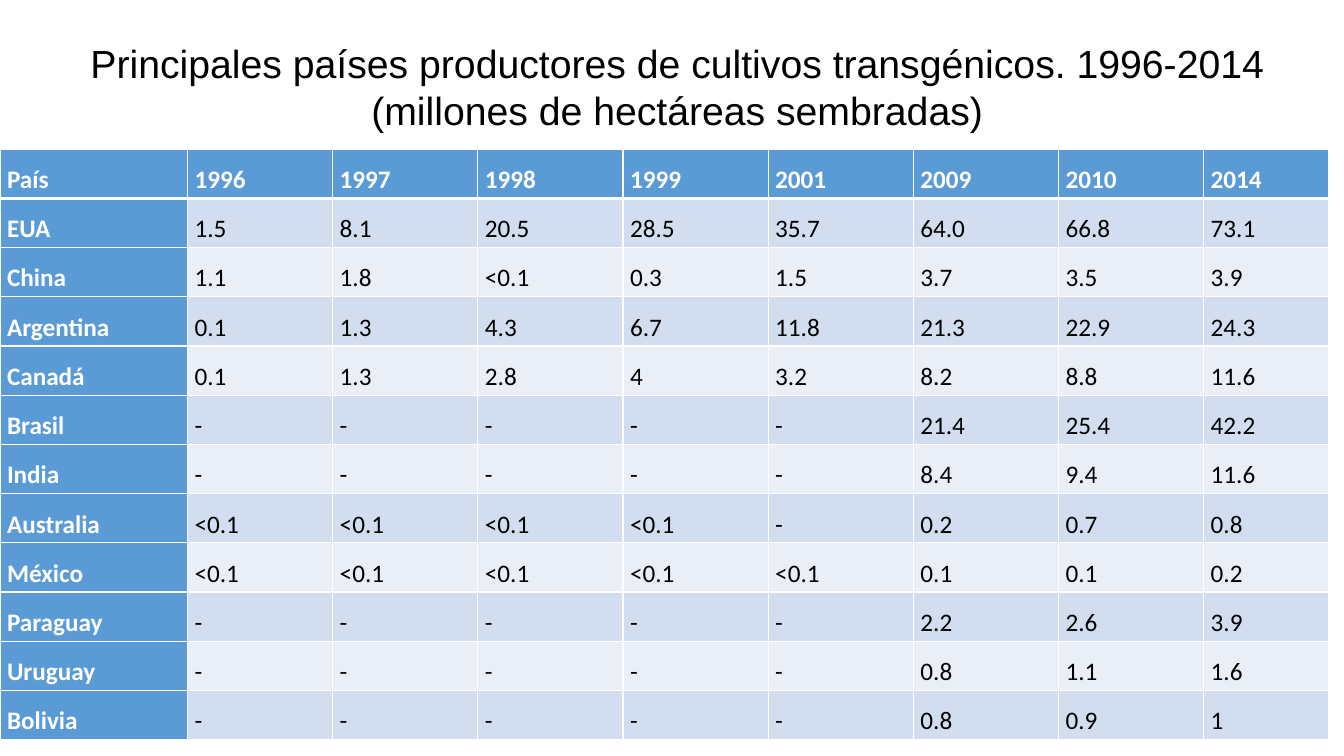
from lxml.etree import SubElement
from pptx import Presentation
from pptx.dml.color import RGBColor
from pptx.enum.text import MSO_ANCHOR, PP_ALIGN
from pptx.oxml.ns import qn
from pptx.util import Inches, Pt

TITLE = ("Principales países productores de cultivos transgénicos. 1996-2014 "
         "(millones de hectáreas sembradas)")
ROWS = [
    ("País", "1996", "1997", "1998", "1999", "2001", "2009", "2010", "2014"),
    ("EUA", "1.5", "8.1", "20.5", "28.5", "35.7", "64.0", "66.8", "73.1"),
    ("China", "1.1", "1.8", "<0.1", "0.3", "1.5", "3.7", "3.5", "3.9"),
    ("Argentina", "0.1", "1.3", "4.3", "6.7", "11.8", "21.3", "22.9", "24.3"),
    ("Canadá", "0.1", "1.3", "2.8", "4", "3.2", "8.2", "8.8", "11.6"),
    ("Brasil", "-", "-", "-", "-", "-", "21.4", "25.4", "42.2"),
    ("India", "-", "-", "-", "-", "-", "8.4", "9.4", "11.6"),
    ("Australia", "<0.1", "<0.1", "<0.1", "<0.1", "-", "0.2", "0.7", "0.8"),
    ("México", "<0.1", "<0.1", "<0.1", "<0.1", "<0.1", "0.1", "0.1", "0.2"),
    ("Paraguay", "-", "-", "-", "-", "-", "2.2", "2.6", "3.9"),
    ("Uruguay", "-", "-", "-", "-", "-", "0.8", "1.1", "1.6"),
    ("Bolivia", "-", "-", "-", "-", "-", "0.8", "0.9", "1"),
]
COL_WIDTHS = [1.86] + [1.44] * 7 + [1.24]
TABLE_HEIGHT = 5.86
HEADER, BANDS = "5B9BD5", ("EAEFF7", "D2DEEF")
WHITE, BLACK = "FFFFFF", "000000"


def rgb(color):
    return RGBColor.from_string(color)


def write(tf, text, size=18, font="Calibri", color=BLACK, bold=False,
          align=PP_ALIGN.JUSTIFY, spacing=1.5, after=1):
    p = tf.paragraphs[0]
    p.alignment, p.line_spacing, p.space_after = align, spacing, Pt(after)
    r = p.add_run()
    r.text = text
    r.font.size, r.font.name, r.font.bold = Pt(size), font, bold
    r.font.color.rgb = rgb(color)


def add_borders(cell, top, bottom):
    """Draw white borders; top and bottom are widths in points."""
    tcPr = cell._tc.get_or_add_tcPr()
    for side, width in (("L", 1), ("R", 1), ("T", top), ("B", bottom)):
        ln = SubElement(tcPr, qn(f"a:ln{side}"), w=str(Pt(width)))
        fill = SubElement(ln, qn("a:solidFill"))
        SubElement(fill, qn("a:srgbClr"), val=WHITE)


def add_title(s):
    title = s.shapes.title
    title.left, title.top = Inches(0.1), Inches(0.34)
    title.width, title.height = Inches(13.23), Inches(1.35)
    tf = title.text_frame
    tf.word_wrap = True
    tf.vertical_anchor = MSO_ANCHOR.MIDDLE
    tf.margin_bottom = Inches(0.36)
    write(tf, TITLE, size=28, font="Arial", align=PP_ALIGN.CENTER,
          spacing=1.0, after=0)


def add_crop_table(s):
    table = s.shapes.add_table(
        len(ROWS), len(COL_WIDTHS), Inches(0), Inches(1.48),
        Inches(sum(COL_WIDTHS)), Inches(TABLE_HEIGHT)).table
    table.first_col = True
    for col, width in zip(table.columns, COL_WIDTHS):
        col.width = Inches(width)
    for i, values in enumerate(ROWS):
        for j, value in enumerate(values):
            cell = table.cell(i, j)
            is_header = i == 0 or j == 0
            cell.margin_left = cell.margin_right = Inches(0.07)
            cell.margin_top = cell.margin_bottom = 0
            add_borders(cell, top=3 if i == 1 else 1, bottom=3 if i == 0 else 1)
            cell.fill.solid()
            cell.fill.fore_color.rgb = rgb(HEADER if is_header else BANDS[i % 2])
            write(cell.text_frame, value, bold=is_header,
                  color=WHITE if is_header else BLACK)


def main():
    prs = Presentation()
    prs.slide_width, prs.slide_height = Inches(13.33), Inches(7.5)
    s = prs.slides.add_slide(prs.slide_layouts[5])
    add_crop_table(s)
    add_title(s)
    prs.save("out.pptx")


if __name__ == "__main__":
    main()
